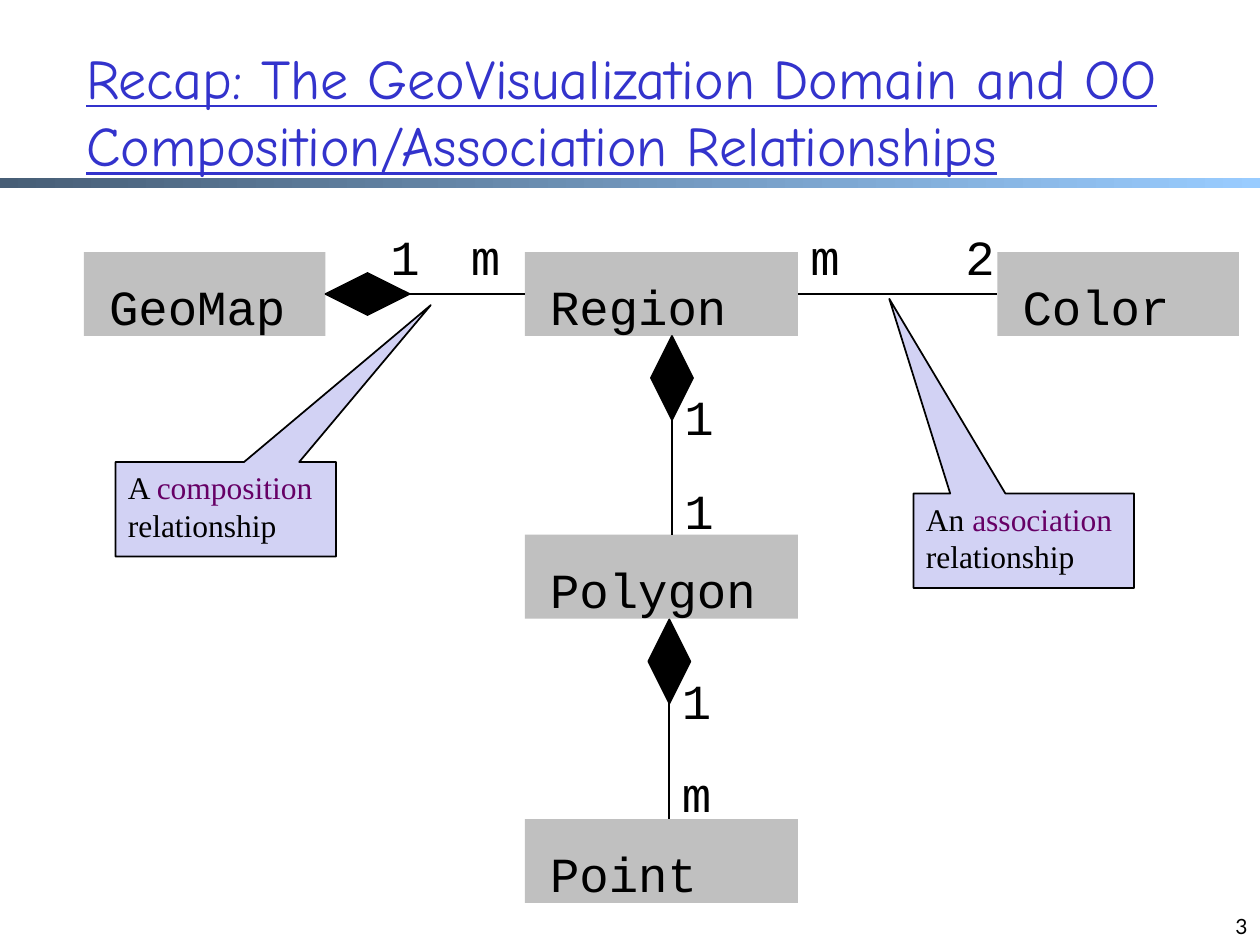
from lxml.etree import SubElement
from pptx import Presentation
from pptx.dml.color import RGBColor
from pptx.enum.shapes import MSO_CONNECTOR, MSO_SHAPE
from pptx.enum.text import MSO_ANCHOR, PP_ALIGN
from pptx.oxml.ns import qn
from pptx.util import Pt

HEX = {"title": "3333CC", "ink": "000000", "box": "C0C0C0", "note": "D2D2F4",
       "key": "660066", "dark": "475E76", "light": "99CCFF"}
RGB = {name: RGBColor.from_string(code) for name, code in HEX.items()}

deck = Presentation()
deck.slide_width, deck.slide_height = Pt(720), Pt(540)
slide = deck.slides.add_slide(deck.slide_layouts[5])
shapes = slide.shapes


def add_form(kind, left, top, width, height, fill, line=None):
    """Add a preset shape without shadow, outlined only if a line colour is given."""
    form = shapes.add_shape(kind, Pt(left), Pt(top), Pt(width), Pt(height))
    form.shadow.inherit = False
    form.fill.solid()
    form.fill.fore_color.rgb = RGB[fill]
    if line:
        form.line.color.rgb = RGB[line]
        form.line.width = Pt(1)
    else:
        form.line.fill.background()
    return form


def style(para, font, size, color="ink", align=PP_ALIGN.LEFT):
    para.alignment = align
    para.font.name = font
    para.font.size = Pt(size)
    para.font.color.rgb = RGB[color]


# Title and the band below it
band = add_form(MSO_SHAPE.RECTANGLE, 0, 101.5, 720, 6, "dark")
band.fill.gradient()
band.fill.gradient_angle = 0
for stop, pos, name in zip(band.fill.gradient_stops, (0, 1), ("dark", "light")):
    stop.position = pos
    stop.color.rgb = RGB[name]

title = shapes.title
title.left, title.top, title.width, title.height = Pt(42), Pt(18), Pt(654), Pt(90)
frame = title.text_frame
frame.text = "Recap: The GeoVisualization Domain and OO Composition/Association Relationships"
frame.vertical_anchor = MSO_ANCHOR.MIDDLE
style(frame.paragraphs[0], "Comic Neue", 32, "title")
frame.paragraphs[0].font.underline = True

# Classes
boxes = {}
for name, left, top, width in [
    ("GeoMap", 48, 144, 138),
    ("Region", 300, 144, 156),
    ("Polygon", 300, 305.5, 156),
    ("Color", 570, 144, 138),
    ("Point", 300, 468, 156),
]:
    box = add_form(MSO_SHAPE.RECTANGLE, left, top, width, 48, "box")
    frame = box.text_frame
    frame.text = name
    frame.vertical_anchor = MSO_ANCHOR.TOP
    frame.margin_left = frame.margin_right = Pt(14.4)
    frame.margin_top, frame.margin_bottom = Pt(14), 0
    style(frame.paragraphs[0], "Courier New", 28)
    boxes[name] = box

# Composition diamonds
gems = [add_form(MSO_SHAPE.DIAMOND, *rect, "ink", "ink") for rect in [
    (186, 156, 48, 24), (372, 192, 24, 48), (370.5, 354, 24, 48)]]

# Relations: start shape and side, end point, end shape and side if joined
for start, side, end, goal, port in [
    (gems[0], 3, (300, 168), "Region", 1),
    (boxes["Region"], 3, (570, 168), "Color", 1),
    (gems[1], 2, (384, 305.5), None, None),
    (gems[2], 2, (382.5, 468), None, None),
]:
    x, y = end
    link = shapes.add_connector(MSO_CONNECTOR.STRAIGHT, Pt(x), Pt(y), Pt(x), Pt(y))
    link.begin_connect(start, side)
    if goal:
        link.end_connect(boxes[goal], port)
    link.line.color.rgb = RGB["ink"]
    link.line.width = Pt(1)
    SubElement(link.element.spPr, qn("a:effectLst"))

# Multiplicities
for mark, left, top in [
    ("1", 216, 126), ("m", 262, 126),
    ("m", 456, 126), ("2", 544.5, 126),
    ("1", 384, 217.5), ("1", 384, 271),
    ("1", 382.5, 379.5), ("m", 382.5, 433),
]:
    label = shapes.add_textbox(Pt(left), Pt(top), Pt(31.5), Pt(41))
    label.text_frame.text = mark
    style(label.text_frame.paragraphs[0], "Courier New", 28)

# Callouts
for left, top, tip, parts in [
    (66, 264, (0.93, -2.16), ("A ", "composition", " relationship")),
    (522, 282, (-0.61, -2.56), ("An ", "association", " relationship")),
]:
    note = add_form(MSO_SHAPE.RECTANGULAR_CALLOUT, left, top, 126, 54, "note", "ink")
    note.adjustments[0], note.adjustments[1] = tip
    frame = note.text_frame
    frame.word_wrap = True
    frame.vertical_anchor = MSO_ANCHOR.TOP
    para = frame.paragraphs[0]
    style(para, "Times New Roman", 18)
    for part, color in zip(parts, ("ink", "key", "ink")):
        run = para.add_run()
        run.text = part
        run.font.color.rgb = RGB[color]

# Page number
page = shapes.add_textbox(Pt(552), Pt(504), Pt(168), Pt(36))
page.text_frame.text = "3"
page.text_frame.vertical_anchor = MSO_ANCHOR.BOTTOM
style(page.text_frame.paragraphs[0], "Lato", 12, align=PP_ALIGN.RIGHT)

deck.save("out.pptx")
